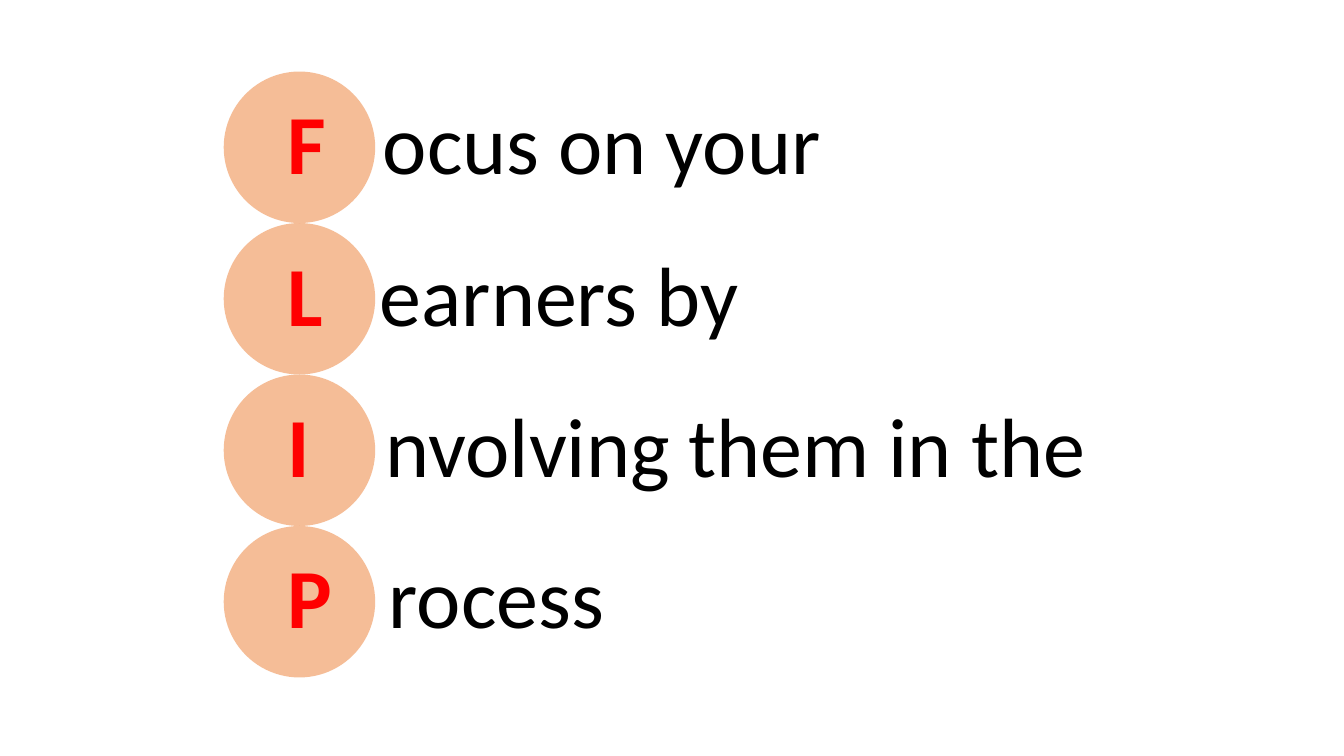
from dataclasses import dataclass

from lxml import etree
from pptx import Presentation
from pptx import util as u
from pptx.dml.color import RGBColor
from pptx.enum import shapes, text
from pptx.oxml import ns

ORANGE = RGBColor(0xED, 0x7D, 0x31)
RED = RGBColor(0xFF, 0x00, 0x00)
BLACK = RGBColor(0x00, 0x00, 0x00)

LEFT, TOP, SIZE = 159.8, 51.1, 108.2
GAP = 43.2
SPACE = 13.56


@dataclass
class Row:
    head: str
    tail: str
    extra: int = 2


ROWS = [
    Row("F", "ocus on your"),
    Row("L", "earners by"),
    Row("I", "nvolving them in the", 3),
    Row("P", "rocess"),
]


def apply(item, form: dict) -> None:
    for name, value in form.items():
        setattr(item, name, value)


def add_disc(slide, order: int) -> None:
    disc = slide.shapes.add_shape(
        shapes.MSO_SHAPE.OVAL,
        u.Pt(LEFT), u.Pt(TOP + order * SIZE), u.Pt(SIZE), u.Pt(SIZE))
    disc.shadow.inherit = False
    disc.fill.solid()
    disc.fill.fore_color.rgb = ORANGE
    disc.line.fill.background()
    color = disc.element.spPr.find(".//" + ns.qn("a:srgbClr"))
    etree.SubElement(color, ns.qn("a:alpha"), val="50000")


def add_run(para, words: str, color: RGBColor, bold: bool,
            track: float = 0) -> None:
    run = para.add_run()
    run.text = words
    apply(run.font, {"name": "Calibri", "size": u.Pt(60), "bold": bold})
    run.font.color.rgb = color
    if track:
        run._r.get_or_add_rPr().set("spc", str(round(track * 100)))


def write_row(para, row: Row, before: float) -> None:
    props = para._p.get_or_add_pPr()
    props.set("marL", "0")
    props.set("indent", "0")
    etree.SubElement(props, ns.qn("a:buNone"))
    apply(para, {
        "alignment": text.PP_ALIGN.LEFT,
        "line_spacing": 0.9,
        "space_before": u.Pt(before),
        "space_after": u.Pt(0),
    })
    add_run(para, row.head, RED, True)
    add_run(para, " ", RED, True, row.extra * SPACE)
    add_run(para, row.tail, BLACK, False)


def main() -> None:
    deck = Presentation()
    apply(deck, {"slide_width": u.Pt(960), "slide_height": u.Pt(540)})
    slide = deck.slides.add_slide(deck.slide_layouts[1])
    title = slide.shapes.title.element
    title.getparent().remove(title)

    for order in range(len(ROWS)):
        add_disc(slide, order)

    body = slide.placeholders[1]
    body.element.getparent().append(body.element)
    apply(body, {
        "left": u.Pt(205.2), "top": u.Pt(TOP),
        "width": u.Pt(577.4), "height": u.Pt(SIZE * len(ROWS)),
    })
    frame = body.text_frame
    apply(frame, {
        "word_wrap": True,
        "auto_size": text.MSO_AUTO_SIZE.NONE,
        "vertical_anchor": text.MSO_ANCHOR.MIDDLE,
        "margin_left": 0, "margin_right": 0,
        "margin_top": u.Pt(6), "margin_bottom": u.Pt(6),
    })
    for order, row in enumerate(ROWS):
        para = frame.add_paragraph() if order else frame.paragraphs[0]
        write_row(para, row, GAP if order else 0)

    deck.save("out.pptx")


if __name__ == "__main__":
    main()
